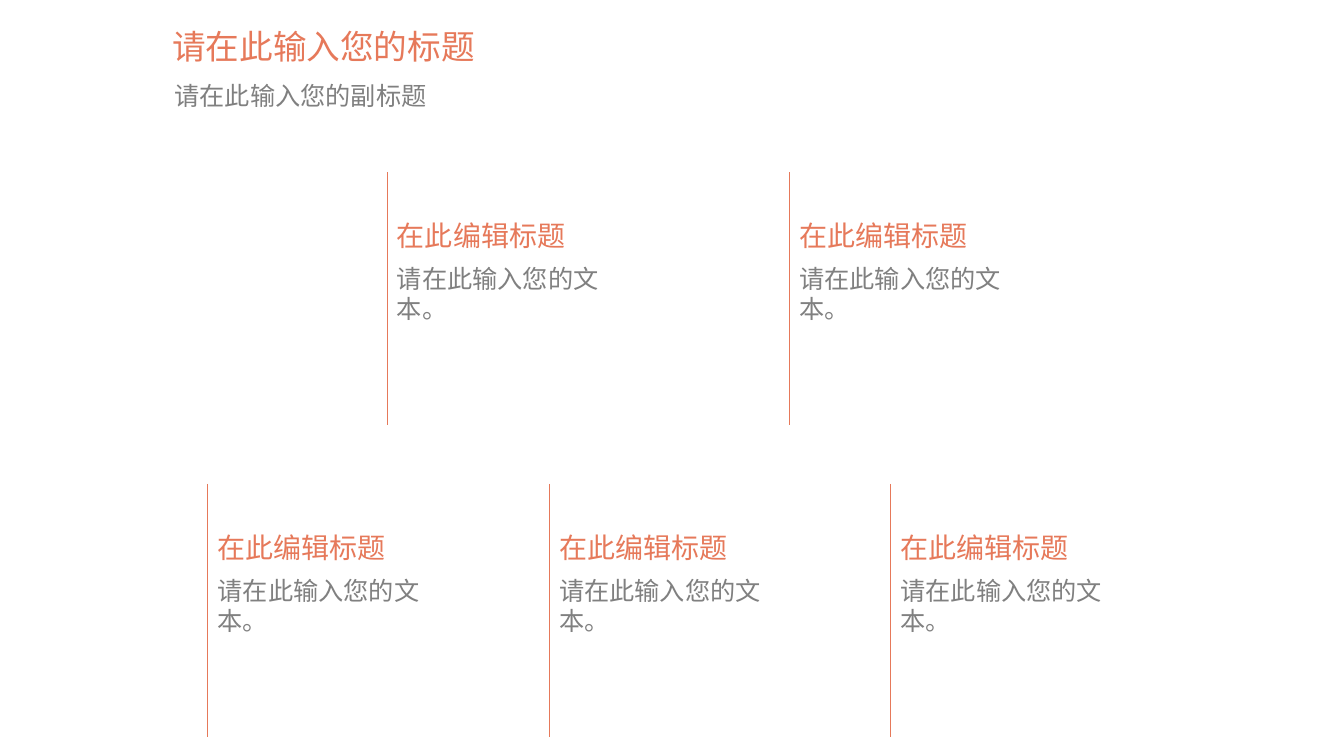
from lxml import etree
from pptx import Presentation
from pptx.dml.color import RGBColor
from pptx.enum.shapes import MSO_CONNECTOR
from pptx.enum.text import MSO_ANCHOR, MSO_AUTO_SIZE, PP_ALIGN
from pptx.oxml.ns import qn
from pptx.util import Pt

STRAIGHT = MSO_CONNECTOR.STRAIGHT
TOP = MSO_ANCHOR.TOP
MIDDLE = MSO_ANCHOR.MIDDLE
LEFT = PP_ALIGN.LEFT
NO_AUTOFIT = MSO_AUTO_SIZE.NONE

ORANGE = "E6795A"
GREY = "808080"
FONT = "Arial"

CARD_WIDTH = 175.7
CARD_HEIGHT = 180.7
HEADING_OFFSET = 28.8
HEADING_HEIGHT = 32.4
BODY_OFFSET = 61.5
BODY_HEIGHT = 118.8
CARD_ROWS = [
    {"top": 123.1, "left": 276.5, "step": 287.3, "count": 2},
    {"top": 345.6, "left": 148.4, "step": 243.9, "count": 3},
]


def color(value):
    return RGBColor.from_string(value)


def place(shape, left, top, width, height):
    shape.left, shape.top = Pt(left), Pt(top)
    shape.width, shape.height = Pt(width), Pt(height)


def write_text(shape, text, size, font_color, anchor):
    frame = shape.text_frame
    frame.word_wrap = True
    frame.auto_size = NO_AUTOFIT
    frame.vertical_anchor = anchor
    frame.text = text
    paragraph = frame.paragraphs[0]
    paragraph.alignment = LEFT
    paragraph.space_before = Pt(0)
    paragraph.font.name = FONT
    paragraph.font.size = Pt(size)
    paragraph.font.color.rgb = color(font_color)
    return paragraph


def add_text(slide, left, top, width, height, text, size, font_color, anchor):
    box = slide.shapes.add_textbox(Pt(left), Pt(top), Pt(width), Pt(height))
    write_text(box, text, size, font_color, anchor)


def add_rule(slide, left, top, height):
    rule = slide.shapes.add_connector(
        STRAIGHT, Pt(left), Pt(top), Pt(left), Pt(top + height))
    rule.line.color.rgb = color(ORANGE)
    rule.line.width = Pt(0.75)
    etree.SubElement(rule._element.spPr, qn("a:effectLst"))


def add_card(slide, left, top):
    add_text(slide, left, top + HEADING_OFFSET, CARD_WIDTH, HEADING_HEIGHT,
             "在此编辑标题", 20, ORANGE, MIDDLE)
    add_text(slide, left, top + BODY_OFFSET, CARD_WIDTH, BODY_HEIGHT,
             "请在此输入您的文本。", 18, GREY, TOP)
    add_rule(slide, left, top, CARD_HEIGHT)


def fill_header(slide):
    title = slide.shapes.title
    place(title, 115.9, 10.1, 688.3, 46.1)
    write_text(title, "请在此输入您的标题", 24, ORANGE, MIDDLE)

    subtitle = slide.placeholders[1]
    place(subtitle, 117.4, 56.2, 686.9, 38.9)
    paragraph = write_text(subtitle, "请在此输入您的副标题", 18, GREY, TOP)
    paragraph.line_spacing = 0.9
    properties = paragraph._p.get_or_add_pPr()
    properties.set("marL", "0")
    properties.set("indent", "0")
    properties.find(qn("a:defRPr")).addprevious(
        etree.Element(qn("a:buNone")))


def main():
    presentation = Presentation()
    presentation.slide_width = Pt(960)
    presentation.slide_height = Pt(540)
    slide = presentation.slides.add_slide(presentation.slide_layouts[1])
    fill_header(slide)
    for row in CARD_ROWS:
        for index in range(row["count"]):
            add_card(slide, row["left"] + index * row["step"], row["top"])
    presentation.save("out.pptx")


if __name__ == "__main__":
    main()
